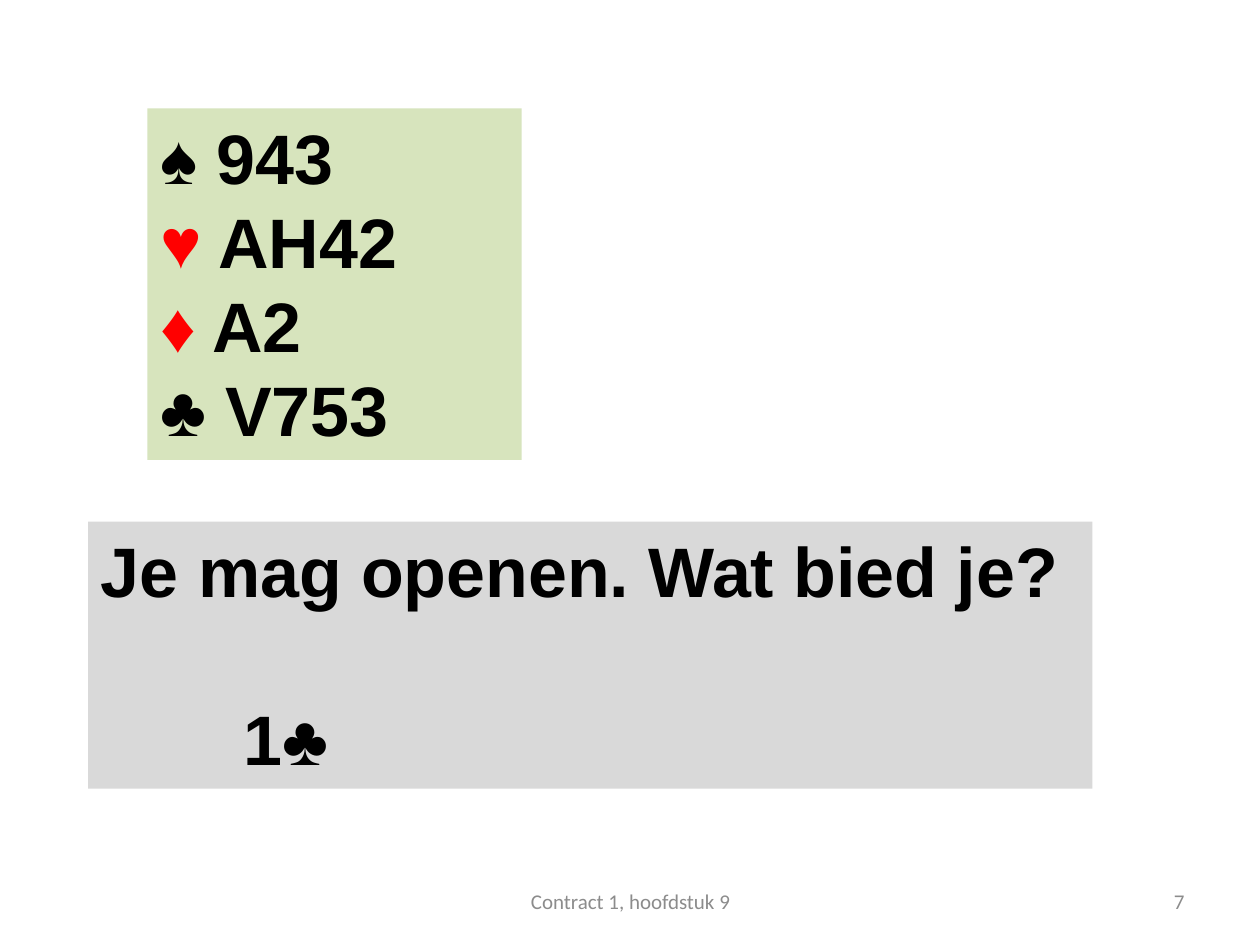
from dataclasses import dataclass

from pptx import Presentation
from pptx.dml.color import RGBColor
from pptx.enum.text import MSO_ANCHOR, MSO_AUTO_SIZE, PP_ALIGN
from pptx.oxml.xmlchemy import OxmlElement
from pptx.util import Inches, Pt

BLACK = RGBColor(0x00, 0x00, 0x00)
RED = RGBColor(0xFF, 0x00, 0x00)
GREEN = RGBColor(0xD7, 0xE4, 0xBD)
LIGHT_GREY = RGBColor(0xD9, 0xD9, 0xD9)
FOOTER_GREY = RGBColor(0x8C, 0x8C, 0x8C)

LARGE = {"name": "Arial", "size": Pt(40), "bold": True}
SMALL = {"name": "Calibri", "size": Pt(12), "bold": False}
LINE_PITCH = Pt(48)


@dataclass(frozen=True)
class Area:
    """Position and size as percentages of the slide."""

    left: float
    top: float
    width: float
    height: float


@dataclass(frozen=True)
class Suit:
    """A suit symbol, the cards held in it and the symbol's colour."""

    symbol: str
    cards: str
    color: RGBColor


@dataclass(frozen=True)
class FooterItem:
    """A small text at the foot of the slide."""

    text: str
    area: Area
    alignment: PP_ALIGN


HAND_AREA = Area(11.7, 11.47, 29.7, 37.2)
QUESTION_AREA = Area(7, 55.2, 79.7, 28.27)
HAND = [
    Suit("♠", "943", BLACK),
    Suit("♥", "AH42", RED),
    Suit("♦", "A2", RED),
    Suit("♣", "V753", BLACK),
]
FOOTER = [
    FooterItem("7", Area(71.7, 92.67, 23.3, 5.33), PP_ALIGN.RIGHT),
    FooterItem("Contract 1, hoofdstuk 9", Area(34.2, 92.67, 31.7, 5.33), PP_ALIGN.CENTER),
]


def set_attributes(target, values: dict) -> None:
    """Set every named value on the target."""
    for name, value in values.items():
        setattr(target, name, value)


def bounds(presentation, area: Area) -> dict:
    """Turn percentages into slide lengths."""
    width, height = presentation.slide_width, presentation.slide_height
    return {
        "left": round(width * area.left / 100),
        "top": round(height * area.top / 100),
        "width": round(width * area.width / 100),
        "height": round(height * area.height / 100),
    }


def add_run(paragraph, text: str, font: dict, color: RGBColor) -> None:
    """Append formatted text to a paragraph."""
    run = paragraph.add_run()
    run.text = text
    set_attributes(run.font, font)
    run.font.color.rgb = color


def add_line(frame, first: bool, indent: float = 0, space_before: int = 0):
    """Return a left-aligned line without a bullet."""
    paragraph = frame.paragraphs[0] if first else frame.add_paragraph()
    set_attributes(paragraph, {
        "alignment": PP_ALIGN.LEFT,
        "line_spacing": LINE_PITCH,
        "space_before": Pt(space_before),
    })
    properties = paragraph._p.get_or_add_pPr()
    properties.set("marL", str(Inches(indent)))
    properties.set("indent", "0")
    properties.append(OxmlElement("a:buNone"))
    return paragraph


def prepare_panel(presentation, shape, area: Area, color: RGBColor):
    """Place and fill a placeholder and return its text frame."""
    set_attributes(shape, bounds(presentation, area))
    shape.fill.solid()
    shape.fill.fore_color.rgb = color
    set_attributes(shape.text_frame, {
        "word_wrap": True,
        "auto_size": MSO_AUTO_SIZE.NONE,
        "vertical_anchor": MSO_ANCHOR.TOP,
    })
    return shape.text_frame


def draw_hand(presentation, shape) -> None:
    """List the cards by suit."""
    frame = prepare_panel(presentation, shape, HAND_AREA, GREEN)
    for index, suit in enumerate(HAND):
        paragraph = add_line(frame, index == 0)
        add_run(paragraph, suit.symbol, LARGE, suit.color)
        add_run(paragraph, f" {suit.cards}", LARGE, BLACK)


def draw_question(presentation, shape) -> None:
    """Write the question with its answer below."""
    frame = prepare_panel(presentation, shape, QUESTION_AREA, LIGHT_GREY)
    add_run(add_line(frame, True), "Je mag openen. Wat bied je?", LARGE, BLACK)
    add_run(add_line(frame, False, 1.13, 48), "1♣", LARGE, BLACK)


def draw_footer_item(presentation, slide, item: FooterItem) -> None:
    """Add one footer text."""
    box = slide.shapes.add_textbox(**bounds(presentation, item.area))
    set_attributes(box.text_frame, {"word_wrap": True, "vertical_anchor": MSO_ANCHOR.MIDDLE})
    paragraph = box.text_frame.paragraphs[0]
    paragraph.alignment = item.alignment
    add_run(paragraph, item.text, SMALL, FOOTER_GREY)


def main() -> None:
    """Build and save the slide."""
    presentation = Presentation()
    set_attributes(presentation, {"slide_width": Inches(10), "slide_height": Inches(7.5)})
    slide = presentation.slides.add_slide(presentation.slide_layouts[1])
    draw_hand(presentation, slide.placeholders[1])
    draw_question(presentation, slide.shapes.title)
    for item in FOOTER:
        draw_footer_item(presentation, slide, item)
    presentation.save("out.pptx")


if __name__ == "__main__":
    main()
